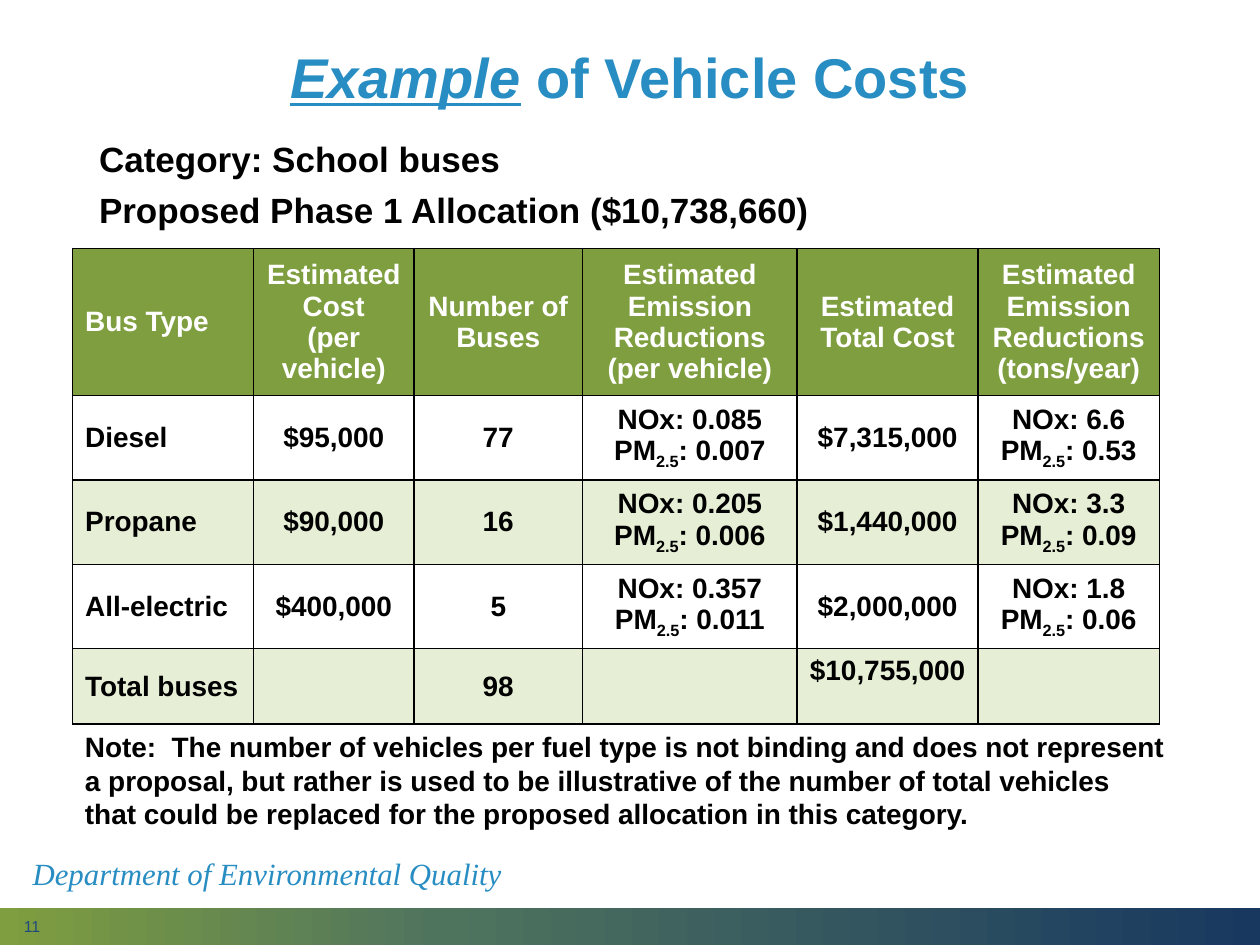
from copy import deepcopy
from dataclasses import dataclass

from lxml import etree
from pptx import Presentation, util as u
from pptx.dml.color import RGBColor
from pptx.enum import shapes, text
from pptx.oxml.ns import qn

Pt = u.Pt
LEFT, CENTER = text.PP_ALIGN.LEFT, text.PP_ALIGN.CENTER
TOP, MIDDLE = text.MSO_ANCHOR.TOP, text.MSO_ANCHOR.MIDDLE


@dataclass(frozen=True)
class Theme:
    sans: str = "Arial"
    serif: str = "Times New Roman"
    accent: str = "288DC2"
    green: str = "7F9E3F"
    teal: str = "4F745E"
    navy: str = "183860"
    band: str = "E6EFD6"
    number: str = "1F497D"
    black: str = "000000"
    white: str = "FFFFFF"
    title_size: float = 32
    lead_size: float = 20
    footer_size: float = 17.6
    body_size: float = 16
    number_size: float = 9


class SlideBuilder:
    def __init__(self, s, theme):
        self.s, self.theme = s, theme

    def fill_text(self, tf, paragraphs, fmt, align=LEFT, anchor=TOP, spacing=None, gap=0):
        """Fill a frame; a paragraph is a string or a list of (text, extra format) runs."""
        tf.word_wrap, tf.vertical_anchor = True, anchor
        for i, runs in enumerate(paragraphs):
            p = tf.paragraphs[0] if i == 0 else tf.add_paragraph()
            p.alignment, p.line_spacing = align, spacing
            if i and gap:
                p.space_before = Pt(gap)
            for words, extra in [(runs, {})] if isinstance(runs, str) else runs:
                r = p.add_run()
                r.text = words
                self.style(r.font, {**fmt, **extra})

    def style(self, font, fmt):
        for name, value in fmt.items():
            if name == "color":
                font.color.rgb = RGBColor.from_string(value)
            elif name == "baseline":
                font._element.set("baseline", str(value))
            else:
                setattr(font, name, Pt(value) if name == "size" else value)

    def title(self, box, runs, fmt):
        sp = self.s.shapes.title
        sp.left, sp.top, sp.width, sp.height = map(Pt, box)
        sp.text_frame.auto_size = text.MSO_AUTO_SIZE.NONE
        self.fill_text(sp.text_frame, [runs], fmt, CENTER, MIDDLE, 0.9)

    def text_box(self, box, paragraphs, fmt, **layout):
        sp = self.s.shapes.add_textbox(*map(Pt, box))
        self.fill_text(sp.text_frame, paragraphs, fmt, **layout)

    def gradient_bar(self, box, stops):
        """Draw a left-to-right gradient from (position, colour) stops."""
        sp = self.s.shapes.add_shape(shapes.MSO_SHAPE.RECTANGLE, *map(Pt, box))
        sp.shadow.inherit = False
        sp.line.fill.background()
        sp.fill.gradient()
        sp.fill.gradient_angle = 0
        first = sp.fill.gradient_stops[0]._gs
        for _ in stops[2:]:
            first.addnext(deepcopy(first))
        for stop, (position, color) in zip(sp.fill.gradient_stops, stops):
            stop.position = position
            stop.color.rgb = RGBColor.from_string(color)

    def border(self, cell):
        tc_pr = cell._tc.get_or_add_tcPr()
        for side in ("lnL", "lnR", "lnT", "lnB"):
            ln = etree.SubElement(tc_pr, qn(f"a:{side}"), w=str(Pt(1)))
            fill = etree.SubElement(ln, qn("a:solidFill"))
            etree.SubElement(fill, qn("a:srgbClr"), val=self.theme.black)

    def table(self, left, top, widths, heights, rows):
        t = self.theme
        table = self.s.shapes.add_table(
            len(heights), len(widths), Pt(left), Pt(top), Pt(sum(widths)), Pt(sum(heights))
        ).table
        for column, width in zip(table.columns, widths):
            column.width = Pt(width)
        for row, height in zip(table.rows, heights):
            row.height = Pt(height)
        for i, row in enumerate(rows):
            back = t.green if i == 0 else (t.white if i % 2 else t.band)
            fmt = dict(name=t.sans, size=t.body_size, bold=True,
                       color=t.black if i else t.white)
            for j, paragraphs in enumerate(row):
                cell = table.cell(i, j)
                self.border(cell)
                cell.fill.solid()
                cell.fill.fore_color.rgb = RGBColor.from_string(back)
                self.fill_text(cell.text_frame, paragraphs, fmt, CENTER if j else LEFT)
                cell.vertical_anchor = MIDDLE
        return table


def emissions(nox, pm):
    return [f"NOx: {nox}", [("PM", {}), ("2.5", {"baseline": -25000}), (f": {pm}", {})]]


HEADER = [
    ["Bus Type"],
    ["Estimated Cost", "(per vehicle)"],
    ["Number of Buses"],
    ["Estimated Emission Reductions", "(per vehicle)"],
    ["Estimated Total Cost"],
    ["Estimated Emission Reductions", "(tons/year)"],
]
BUSES = [
    ("Diesel", "$95,000", "77", ("0.085", "0.007"), "$7,315,000", ("6.6", "0.53")),
    ("Propane", "$90,000", "16", ("0.205", "0.006"), "$1,440,000", ("3.3", "0.09")),
    ("All-electric", "$400,000", "5", ("0.357", "0.011"), "$2,000,000", ("1.8", "0.06")),
]
TOTAL = [["Total buses"], [], ["98"], [], ["$10,755,000"], []]
NOTE = [
    "Note:  The number of vehicles per fuel type is not binding and does not represent",
    "a proposal, but rather is used to be illustrative of the number of total vehicles",
    "that could be replaced for the proposed allocation in this category.",
]


def main():
    t = Theme()
    prs = Presentation()
    prs.slide_width, prs.slide_height = Pt(720), Pt(540)
    b = SlideBuilder(prs.slides.add_slide(prs.slide_layouts[5]), t)
    bold = dict(name=t.sans, bold=True, color=t.black)

    b.gradient_bar((0, 519, 720, 21), [(0, t.green), (0.35, t.teal), (1, t.navy)])
    b.title((49.5, 8, 621, 75.5),
            [("Example", dict(italic=True, underline=True)), (" of Vehicle Costs", {})],
            {**bold, "size": t.title_size, "color": t.accent})
    b.text_box((49.5, 78, 605, 60),
               ["Category: School buses", "Proposed Phase 1 Allocation ($10,738,660)"],
               {**bold, "size": t.lead_size}, spacing=0.9, gap=7.5)
    b.text_box((6.5, 523.5, 162, 11), ["11"],
               dict(name=t.sans, size=t.number_size, color=t.number), anchor=MIDDLE)
    b.text_box((11.5, 485.5, 295, 29.5), ["Department of Environmental Quality"],
               dict(name=t.serif, size=t.footer_size, italic=True, color=t.accent),
               anchor=MIDDLE, spacing=0.9)

    body = [[emissions(*v) if isinstance(v, tuple) else [v] for v in bus] for bus in BUSES]
    table = b.table(41.5, 142, [103.5, 91.5, 96.5, 122.5, 103.5, 103.5],
                    [78, 45, 45.5, 47, 43], [HEADER, *body, TOTAL])
    table.cell(4, 4).vertical_anchor = TOP
    b.text_box((41.5, 413.5, 640, 65.5), NOTE, {**bold, "size": t.body_size})

    prs.save("out.pptx")


if __name__ == "__main__":
    main()
